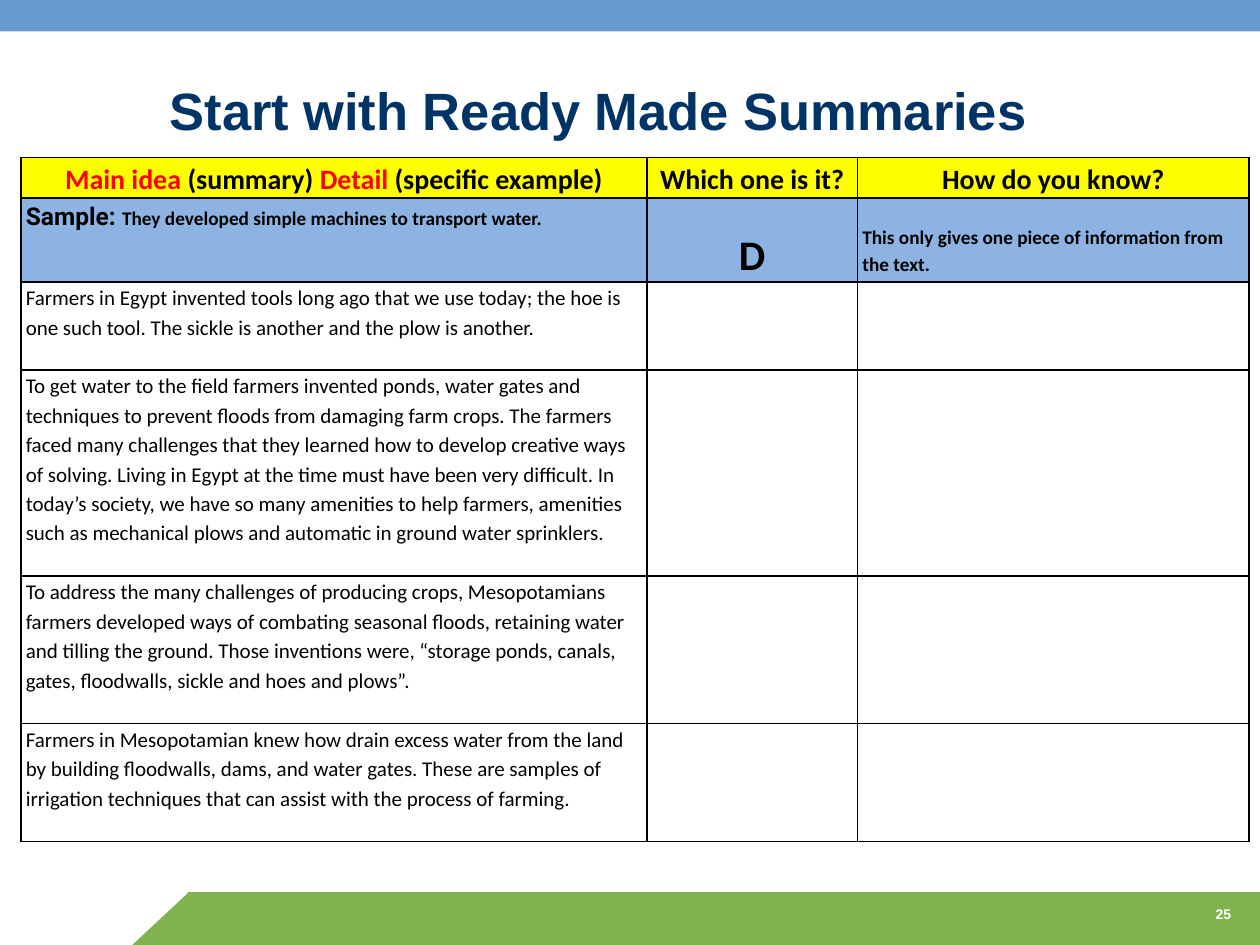
import pptx
import pptx.dml.color
import pptx.enum.shapes
import pptx.enum.text
import pptx.oxml
import pptx.oxml.ns
import pptx.util

SLIDE_WIDTH = pptx.util.Inches(10)
SLIDE_HEIGHT = pptx.util.Inches(7.5)
COLORS = {
    "green": "80B34D",
    "blue": "6699CC",
    "navy": "003366",
    "white": "FFFFFF",
    "black": "000000",
    "ink": "020202",
    "red": "FF0000",
    "yellow": "FFFF00",
    "sample": "8DB3E2",
}
SHAPE = pptx.enum.shapes.MSO_SHAPE
ALIGN = pptx.enum.text.PP_ALIGN
ANCHOR = pptx.enum.text.MSO_ANCHOR

COLUMN_SHARES = [49.7, 16.7, 31.1]
ROW_SHARES = [4.27, 8.9, 9.33, 21.8, 15.6, 12.5]
HEADINGS = [
    [("Main idea ", "red"), ("(summary) ", "ink"),
     ("Detail", "red"), (" (specific example)", "ink")],
    [("Which one is it?", "ink")],
    [("How do you know?", "ink")],
]
STATEMENTS = [
    "Farmers in Egypt invented tools long ago that we use today; the hoe is "
    "one such tool. The sickle is another and the plow is another.",
    "To get water to the field farmers invented ponds, water gates and "
    "techniques to prevent floods from damaging farm crops. The farmers faced "
    "many challenges that they learned how to develop creative ways of solving. "
    "Living in Egypt at the time must have been very difficult. In today’s "
    "society, we have so many amenities to help farmers, amenities such as "
    "mechanical plows and automatic in ground water sprinklers.",
    "To address the many challenges of producing crops, Mesopotamians farmers "
    "developed ways of combating seasonal floods, retaining water and tilling "
    "the ground. Those inventions were, “storage ponds, canals, gates, "
    "floodwalls, sickle and hoes and plows”.",
    "Farmers in Mesopotamian knew how drain excess water from the land by "
    "building floodwalls, dams, and water gates. These are samples of "
    "irrigation techniques that can assist with the process of farming.",
]


def color(name):
    return pptx.dml.color.RGBColor.from_string(COLORS[name])


def across(percent):
    return round(SLIDE_WIDTH * percent / 100)


def down(percent):
    return round(SLIDE_HEIGHT * percent / 100)


def box(left, top, width, height):
    """Turn percentages of the slide into a position and size."""
    return across(left), down(top), across(width), down(height)


def set_font(font, size, name="Calibri", bold=True, fill="ink"):
    font.size = pptx.util.Pt(size)
    font.name = name
    font.bold = bold
    font.color.rgb = color(fill)


def add_band(slide, preset, place, fill):
    band = slide.shapes.add_shape(preset, *box(*place))
    band.shadow.inherit = False
    band.fill.solid()
    band.fill.fore_color.rgb = color(fill)
    band.line.fill.background()
    return band


def add_label(slide, text, place, size, fill, align, anchor):
    frame = slide.shapes.add_textbox(*box(*place)).text_frame
    frame.word_wrap = True
    frame.vertical_anchor = anchor
    label = frame.paragraphs[0]
    label.text = text
    label.alignment = align
    set_font(label.font, size, "Arial", fill=fill)


def add_borders(cell):
    properties = cell._tc.get_or_add_tcPr()
    for position, side in enumerate(("lnL", "lnR", "lnT", "lnB")):
        border = pptx.oxml.parse_xml(
            f'<a:{side} {pptx.oxml.ns.nsdecls("a")} w="12700"><a:solidFill>'
            f'<a:srgbClr val="{COLORS["black"]}"/></a:solidFill></a:{side}>')
        properties.insert(position, border)


def format_cell(cell, fill):
    cell.margin_left = cell.margin_right = pptx.util.Inches(0.04)
    cell.margin_top = cell.margin_bottom = 0
    if fill:
        cell.fill.solid()
        cell.fill.fore_color.rgb = color(fill)
    else:
        cell.fill.background()
    add_borders(cell)


def write_cell(cell, text, size, bold=True, align=ALIGN.LEFT, anchor=ANCHOR.TOP):
    cell.vertical_anchor = anchor
    paragraph = cell.text_frame.paragraphs[0]
    paragraph.text = text
    paragraph.alignment = align
    paragraph.line_spacing = 1.15
    set_font(paragraph.font, size, bold=bold)
    return paragraph


def write_headings(table):
    for column, pieces in enumerate(HEADINGS):
        heading = write_cell(table.cell(0, column), "", 16, align=ALIGN.CENTER)
        for text, fill in pieces:
            run = heading.add_run()
            run.text = text
            run.font.color.rgb = color(fill)


def write_sample(table):
    sample = write_cell(table.cell(1, 0), "", 11)
    tag = sample.add_run()
    tag.text = "Sample: "
    set_font(tag.font, 14, "Roboto")
    sample.add_run().text = "They developed simple machines to transport water."
    write_cell(table.cell(1, 1), "D", 24, align=ALIGN.CENTER, anchor=ANCHOR.BOTTOM)
    reason = table.cell(1, 2)
    write_cell(reason, "This only gives one piece of information from the text.",
               11, anchor=ANCHOR.BOTTOM)
    reason.margin_bottom = pptx.util.Inches(0.04)


def add_summary_table(slide):
    place = box(1.65, 16.67, sum(COLUMN_SHARES), sum(ROW_SHARES))
    table = slide.shapes.add_table(
        len(ROW_SHARES), len(COLUMN_SHARES), *place).table
    for column, share in zip(table.columns, COLUMN_SHARES):
        column.width = across(share)
    row_fills = ["yellow", "sample"] + [None] * len(STATEMENTS)
    for row, share, fill in zip(table.rows, ROW_SHARES, row_fills):
        row.height = down(share)
        for cell in row.cells:
            format_cell(cell, fill)
    write_headings(table)
    write_sample(table)
    for row, statement in enumerate(STATEMENTS, start=2):
        write_cell(table.cell(row, 0), statement, 12, bold=False)


def main():
    deck = pptx.Presentation()
    deck.slide_width, deck.slide_height = SLIDE_WIDTH, SLIDE_HEIGHT
    slide = deck.slides.add_slide(deck.slide_layouts[6])

    add_band(slide, SHAPE.RECTANGLE, (14.9, 94.4, 85.1, 5.6), "green")
    slope = add_band(slide, SHAPE.RIGHT_TRIANGLE, (10.5, 94.4, 4.5, 5.6), "green")
    slope._element.spPr.xfrm.set("flipH", "1")
    add_band(slide, SHAPE.RECTANGLE, (0, 0, 100, 3.33), "blue")

    add_label(slide, "Start with Ready Made Summaries", (5, 6.67, 85, 8.93),
              30, "navy", ALIGN.CENTER, ANCHOR.BOTTOM)
    add_label(slide, "25", (85.8, 95.2, 12.9, 3.33),
              8, "white", ALIGN.RIGHT, ANCHOR.TOP)
    add_summary_table(slide)
    deck.save("out.pptx")


if __name__ == "__main__":
    main()
